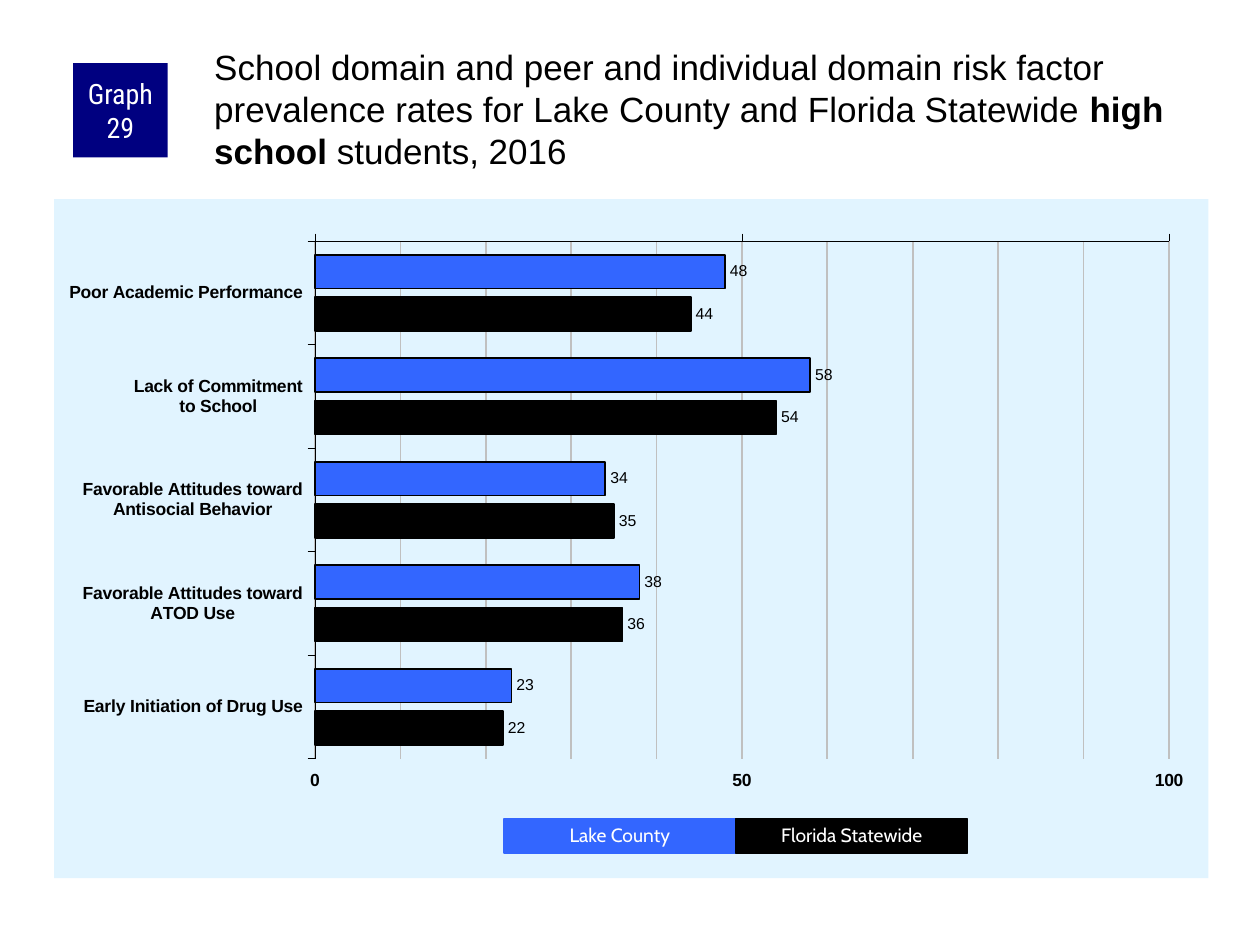
from pptx import Presentation
from pptx.chart.data import CategoryChartData
from pptx.dml.color import RGBColor
from pptx.enum.chart import XL_CHART_TYPE as ChartType
from pptx.enum.chart import XL_LABEL_POSITION as LabelPosition
from pptx.enum.chart import XL_TICK_LABEL_POSITION as TickLabelPosition
from pptx.enum.chart import XL_TICK_MARK as TickMark
from pptx.enum.shapes import MSO_SHAPE as ShapeType
from pptx.enum.text import MSO_ANCHOR as Anchor
from pptx.enum.text import MSO_AUTO_SIZE as AutoSize
from pptx.enum.text import PP_ALIGN as Align
from pptx.oxml import parse_xml
from pptx.oxml.ns import nsdecls
from pptx.util import Inches, Pt

COLORS = {
    "navy": "000080",
    "blue": "3366FF",
    "black": "000000",
    "white": "FFFFFF",
    "panel": "E1F4FF",
    "grid": "C0C0C0",
}
CATEGORIES = [
    "Poor Academic Performance",
    "Lack of Commitment\nto School",
    "Favorable Attitudes toward\nAntisocial Behavior",
    "Favorable Attitudes toward\nATOD Use",
    "Early Initiation of Drug Use",
]
SERIES = [
    ("Lake County", "blue", (48, 58, 34, 38, 23)),
    ("Florida Statewide", "black", (44, 54, 35, 36, 22)),
]
TITLE_RUNS = [
    ("School domain and peer and individual domain risk factor prevalence "
     "rates for Lake County and Florida Statewide ", False),
    ("high school", True),
    (" students, 2016", False),
]


def color(name):
    return RGBColor.from_string(COLORS[name])


def set_fill(fill, name):
    fill.solid()
    fill.fore_color.rgb = color(name)


def set_line(line, name, width):
    line.color.rgb = color(name)
    line.width = Pt(width)


def set_font(font, name, size, color_name, bold=False):
    font.name = name
    font.size = Pt(size)
    font.bold = bold
    font.color.rgb = color(color_name)


def set_margins(text_frame, left, top, right, bottom):
    text_frame.margin_left = Inches(left)
    text_frame.margin_top = Inches(top)
    text_frame.margin_right = Inches(right)
    text_frame.margin_bottom = Inches(bottom)


def add_label_box(slide, box, text, fill, font_name, size):
    shape = slide.shapes.add_shape(ShapeType.RECTANGLE, *map(Inches, box))
    shape.shadow.inherit = False
    set_fill(shape.fill, fill)
    shape.line.fill.background()
    text_frame = shape.text_frame
    text_frame.word_wrap = True
    text_frame.vertical_anchor = Anchor.MIDDLE
    set_margins(text_frame, 0.05, 0, 0.05, 0)
    text_frame.text = text
    paragraph = text_frame.paragraphs[0]
    paragraph.alignment = Align.CENTER
    set_font(paragraph.runs[0].font, font_name, size, "white")
    return shape


def add_title(slide, left, top, width, height):
    title = slide.shapes.title
    title.left, title.top = Inches(left), Inches(top)
    title.width, title.height = Inches(width), Inches(height)
    text_frame = title.text_frame
    text_frame.auto_size = AutoSize.NONE
    text_frame.word_wrap = True
    text_frame.vertical_anchor = Anchor.TOP
    set_margins(text_frame, 0.03, 0.03, 0, 0)
    paragraph = text_frame.paragraphs[0]
    paragraph.alignment = Align.LEFT
    for text, bold in TITLE_RUNS:
        run = paragraph.add_run()
        run.text = text
        set_font(run.font, "Arial", 20, "black", bold)


def format_axis(axis):
    axis.major_tick_mark = TickMark.OUTSIDE
    axis.minor_tick_mark = TickMark.NONE
    set_line(axis.format.line, "black", 0.25)
    set_font(axis.tick_labels.font, "Arial", 10, "black", True)


def set_minor_gridlines(axis, name, width):
    axis.has_minor_gridlines = True
    axis._element.find("{*}minorGridlines").append(parse_xml(
        f'<c:spPr {nsdecls("c", "a")}><a:ln w="{Pt(width)}"><a:solidFill>'
        f'<a:srgbClr val="{COLORS[name]}"/></a:solidFill></a:ln></c:spPr>'))


def set_plot_area(chart, x, y, width, height):
    plot_area = chart.plots[0]._element.getparent()
    for layout in plot_area.findall("{*}layout"):
        plot_area.remove(layout)
    plot_area.insert(0, parse_xml(
        f'<c:layout {nsdecls("c")}><c:manualLayout>'
        '<c:layoutTarget val="inner"/><c:xMode val="edge"/><c:yMode val="edge"/>'
        f'<c:x val="{x}"/><c:y val="{y}"/><c:w val="{width}"/><c:h val="{height}"/>'
        '</c:manualLayout></c:layout>'))


def set_panel(chart, name):
    properties = parse_xml(
        f'<c:spPr {nsdecls("c", "a")}><a:solidFill><a:srgbClr val="{COLORS[name]}"/>'
        '</a:solidFill><a:ln><a:noFill/></a:ln></c:spPr>')
    chart._chartSpace.chart.addnext(properties)


def add_risk_chart(slide, left, top, width, height):
    data = CategoryChartData()
    data.categories = CATEGORIES
    for name, _, values in SERIES:
        data.add_series(name, values)
    chart = slide.shapes.add_chart(
        ChartType.BAR_CLUSTERED, Inches(left), Inches(top),
        Inches(width), Inches(height), data).chart
    chart.has_title = False
    chart.has_legend = False
    set_font(chart.font, "Arial", 11.8, "black")
    set_panel(chart, "panel")
    set_plot_area(chart, 0.226, 0.062, 0.74, 0.762)

    format_axis(chart.category_axis)
    chart.category_axis.reverse_order = True
    value_axis = chart.value_axis
    format_axis(value_axis)
    value_axis.minimum_scale, value_axis.maximum_scale = 0, 100
    value_axis.major_unit, value_axis.minor_unit = 50, 10
    value_axis.tick_label_position = TickLabelPosition.HIGH
    value_axis.has_major_gridlines = True
    set_line(value_axis.major_gridlines.format.line, "grid", 1)
    set_minor_gridlines(value_axis, "grid", 1)

    plot = chart.plots[0]
    plot.gap_width, plot.overlap = 80, -25
    plot.vary_by_categories = False
    for series, (_, fill, _) in zip(plot.series, SERIES):
        set_fill(series.format.fill, fill)
        set_line(series.format.line, "black", 1)
        labels = series.data_labels
        labels.show_value = True
        labels.position = LabelPosition.OUTSIDE_END
        set_font(labels.font, "Arial", 9, "black")


def add_legend(slide, left, top, width, height):
    item_width = width / len(SERIES)
    for index, (name, fill, _) in enumerate(SERIES):
        box = (left + index * item_width, top, item_width, height)
        item = add_label_box(slide, box, name, fill, "Cabin", 11)
        set_line(item.line, fill, 0.75)
        item.text_frame.paragraphs[0].line_spacing = 0.9


def main():
    presentation = Presentation()
    presentation.slide_width, presentation.slide_height = Inches(10), Inches(7.5)
    slide = presentation.slides.add_slide(presentation.slide_layouts[5])
    add_risk_chart(slide, 0.43, 1.58, 9.16, 5.39)
    add_label_box(slide, (0.58, 0.5, 0.75, 0.75), "Graph 29", "navy",
                  "Roboto Condensed", 16)
    add_title(slide, 1.67, 0.33, 7.92, 0.83)
    add_legend(slide, 4, 6.5, 3.68, 0.27)
    presentation.save("out.pptx")


if __name__ == "__main__":
    main()
